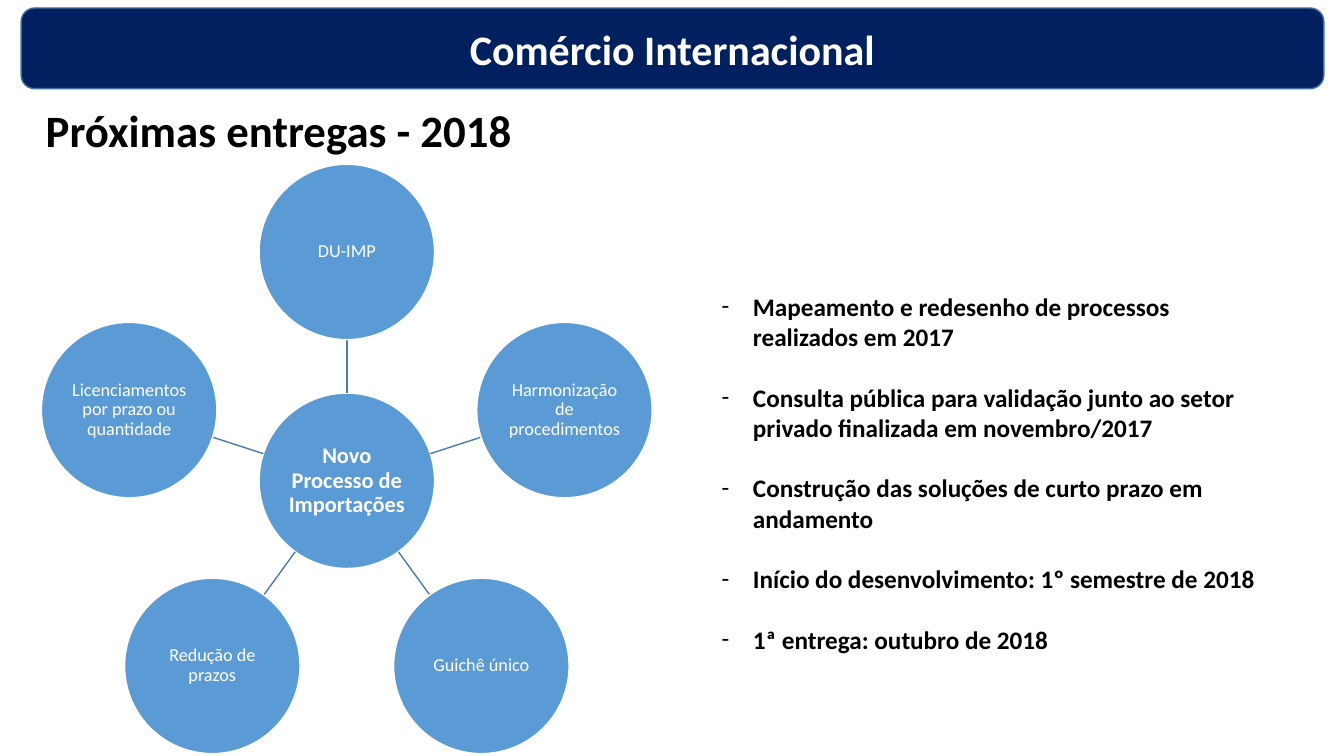
from math import cos, radians, sin

from lxml import etree
from pptx import Presentation
from pptx.dml.color import RGBColor
from pptx.enum import shapes, text
from pptx.oxml.ns import qn
from pptx.util import Inches, Pt

BANNER = "Comércio Internacional"
TITLE = "Próximas entregas - 2018"
HUB = "Novo Processo de Importações"
SPOKES = [
    "DU-IMP",
    "Harmonização de procedimentos",
    "Guichê único",
    "Redução de prazos",
    "Licenciamentos por prazo ou quantidade",
]
MILESTONES = [
    "Mapeamento e redesenho de processos realizados em 2017",
    "Consulta pública para validação junto ao setor privado finalizada em novembro/2017",
    "Construção das soluções de curto prazo em andamento",
    "Início do desenvolvimento: 1º semestre de 2018",
    "1ª entrega: outubro de 2018",
]
COLORS = {
    "navy": "002060",
    "banner_line": "43739E",
    "circle": "5B9BD5",
    "spoke": "497CAB",
    "white": "FFFFFF",
    "black": "000000",
}
CENTER_X, CENTER_Y = 3.44, 4.77
RADIUS = 0.87
ORBIT = 2.27


def color(name):
    return RGBColor.from_string(COLORS[name])


def format_text(paragraph, size, color_name, bold, alignment):
    paragraph.alignment = alignment
    for run in paragraph.runs:
        run.font.name = "Calibri"
        run.font.size = Pt(size)
        run.font.bold = bold
        run.font.color.rgb = color(color_name)


def add_filled_shape(slide, kind, box, label, fill, line, size, bold):
    shape = slide.shapes.add_shape(kind, *map(Inches, box))
    shape.shadow.inherit = False
    shape.fill.solid()
    shape.fill.fore_color.rgb = color(fill)
    shape.line.color.rgb = color(line)
    shape.line.width = Pt(1)
    frame = shape.text_frame
    frame.text = label
    frame.word_wrap = True
    frame.vertical_anchor = text.MSO_ANCHOR.MIDDLE
    format_text(frame.paragraphs[0], size, "white", bold, text.PP_ALIGN.CENTER)
    return shape


def add_circle(slide, x, y, label, size, bold):
    box = (x - RADIUS, y - RADIUS, 2 * RADIUS, 2 * RADIUS)
    circle = add_filled_shape(
        slide, shapes.MSO_SHAPE.OVAL, box, label, "circle", "white", size, bold
    )
    frame = circle.text_frame
    frame.margin_left = frame.margin_right = Inches(0.01)
    frame.margin_top = frame.margin_bottom = Inches(0.01)
    frame.paragraphs[0].line_spacing = 0.9


def orbit_point(angle, distance):
    return CENTER_X + distance * sin(angle), CENTER_Y - distance * cos(angle)


def add_spoke(slide, angle):
    ends = orbit_point(angle, RADIUS) + orbit_point(angle, ORBIT - RADIUS)
    spoke = slide.shapes.add_connector(
        shapes.MSO_CONNECTOR.STRAIGHT, *map(Inches, ends)
    )
    spoke.line.color.rgb = color("spoke")
    spoke.line.width = Pt(1)
    etree.SubElement(spoke._element.spPr, qn("a:effectLst"))


def add_milestones(slide):
    box = slide.shapes.add_textbox(*map(Inches, (7.06, 2.84, 5.73, 3.74)))
    frame = box.text_frame
    frame.word_wrap = True
    for index, milestone in enumerate(MILESTONES):
        paragraph = frame.paragraphs[0] if index == 0 else frame.add_paragraph()
        paragraph.text = milestone
        if index:
            paragraph.space_before = Pt(21.6)
        properties = paragraph._p.get_or_add_pPr()
        properties.set("marL", str(Inches(0.31)))
        properties.set("indent", str(-Inches(0.31)))
        etree.SubElement(properties, qn("a:buFont"), typeface="Calibri")
        etree.SubElement(properties, qn("a:buChar"), char="-")
        format_text(paragraph, 18, "black", True, text.PP_ALIGN.LEFT)


def main():
    presentation = Presentation()
    presentation.slide_width = Inches(13.33)
    presentation.slide_height = Inches(7.5)
    slide = presentation.slides.add_slide(presentation.slide_layouts[5])

    add_filled_shape(
        slide, shapes.MSO_SHAPE.ROUNDED_RECTANGLE, (0.21, 0.08, 12.92, 0.8),
        BANNER, "navy", "banner_line", 30, True,
    )

    title = slide.shapes.title
    title.left, title.top = Inches(-0.18), Inches(0.97)
    title.width, title.height = Inches(5.89), Inches(0.64)
    title.text_frame.text = TITLE
    title.text_frame.vertical_anchor = text.MSO_ANCHOR.TOP
    title.text_frame.auto_size = text.MSO_AUTO_SIZE.NONE
    format_text(
        title.text_frame.paragraphs[0], 32, "black", True, text.PP_ALIGN.CENTER
    )

    add_circle(slide, CENTER_X, CENTER_Y, HUB, 16, True)
    for index, label in enumerate(SPOKES):
        angle = radians(index * 360 / len(SPOKES))
        add_spoke(slide, angle)
        add_circle(slide, *orbit_point(angle, ORBIT), label, 13, False)

    add_milestones(slide)
    presentation.save("out.pptx")


if __name__ == "__main__":
    main()
